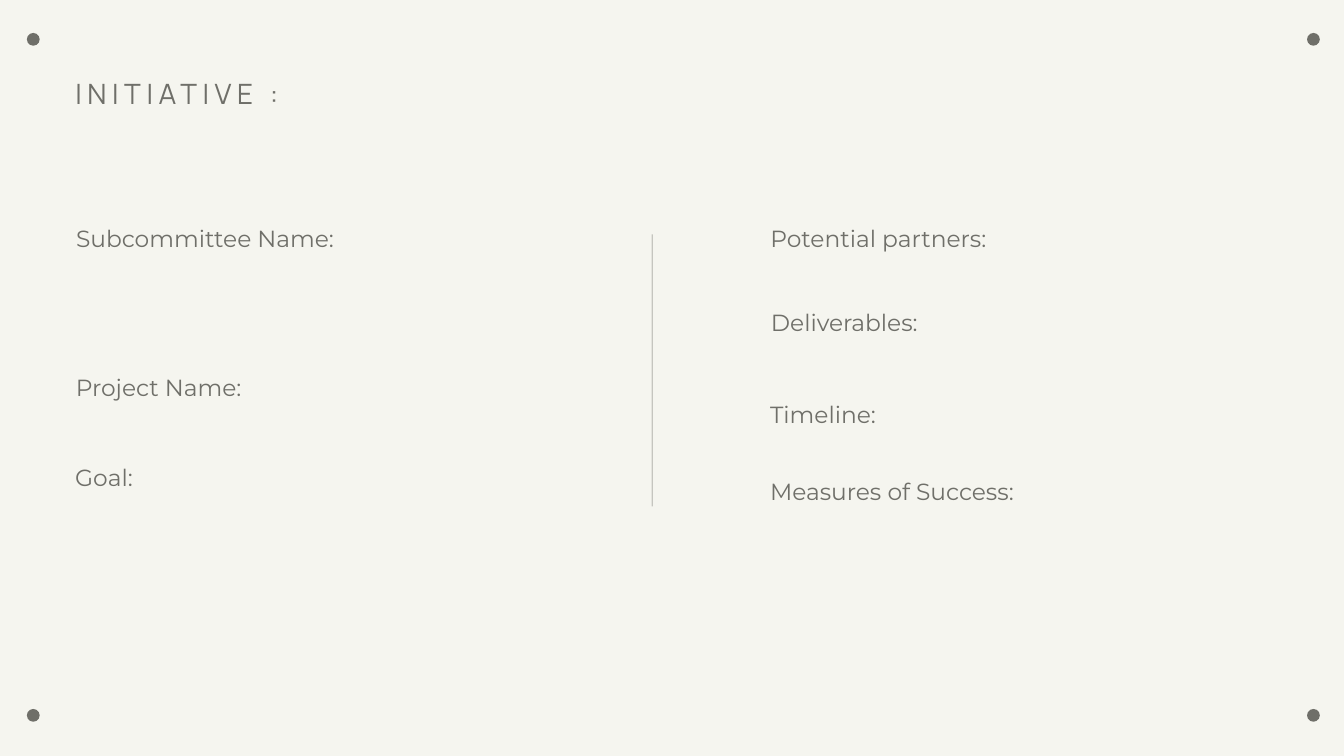
import pptx
import pptx.dml.color
import pptx.enum.shapes
import pptx.enum.text
import pptx.util

W, H = 20, 11.25
INK, PAPER = "6F6F69", "F5F5EF"
LEFT, RIGHT = 0.056 * W, 0.573 * W  # left edges of the two columns
SHAPE = pptx.enum.shapes.MSO_SHAPE
ALIGN = pptx.enum.text.PP_ALIGN


def inches(*values):
    return [pptx.util.Inches(v) for v in values]


def paint(fill, colour):
    fill.solid()
    fill.fore_color.rgb = pptx.dml.color.RGBColor.from_string(colour)


def add_solid(s, kind, x, y, w, h):
    sp = s.shapes.add_shape(kind, *inches(x, y, w, h))
    sp.shadow.inherit = False
    sp.line.fill.background()
    paint(sp.fill, INK)


def add_label(s, text, x, y, w, h=0.45, size=25, leading=35,
              font="Montserrat", align=ALIGN.LEFT, spacing=0):
    tf = s.shapes.add_textbox(*inches(x, y, w, h)).text_frame
    tf.margin_left = tf.margin_top = tf.margin_right = tf.margin_bottom = 0
    tf.word_wrap = True
    tf.auto_size = pptx.enum.text.MSO_AUTO_SIZE.SHAPE_TO_FIT_TEXT
    p = tf.paragraphs[0]
    p.alignment = align
    p.line_spacing = pptx.util.Pt(leading)
    r = p.add_run()
    r.text = text
    r.font.name = font
    r.font.size = pptx.util.Pt(size)
    paint(r.font.fill, INK)
    if spacing:
        r.font._element.set("spc", str(spacing * 100))


def main():
    prs = pptx.Presentation()
    prs.slide_width, prs.slide_height = inches(W, H)
    s = prs.slides.add_slide(prs.slide_layouts[6])
    paint(s.background.fill, PAPER)

    # Corner dots
    for x in (0.4, 19.45):
        for y in (0.49, 10.55):
            add_solid(s, SHAPE.OVAL, x, y, 0.19, 0.19)

    # Divider between the columns
    add_solid(s, SHAPE.RECTANGLE, 9.7, 0.31 * H, 0.01, 0.36 * H)

    # Heading
    add_label(s, "INITIATIVE :", LEFT, 1.06, 13.88, 0.55, size=30,
              leading=42, font="Manrope", spacing=6)

    # Field labels: text, top, width, alignment
    columns = {
        LEFT: [("Subcommittee Name:", 3.27, 3.86, ALIGN.CENTER),
               ("Project Name:", 5.48, 2.48, ALIGN.CENTER),
               ("Goal:", 6.83, 0.86, ALIGN.LEFT)],
        RIGHT: [("Potential partners:", 3.27, 3.22, ALIGN.CENTER),
                ("Deliverables: ", 4.52, 2.3, ALIGN.CENTER),
                ("Timeline:", 5.88, 1.58, ALIGN.LEFT),
                ("Measures of Success:", 7.03, 3.65, ALIGN.LEFT)],
    }
    for x, fields in columns.items():
        for text, y, w, align in fields:
            add_label(s, text, x, y, w, align=align)

    prs.save("out.pptx")


if __name__ == "__main__":
    main()
